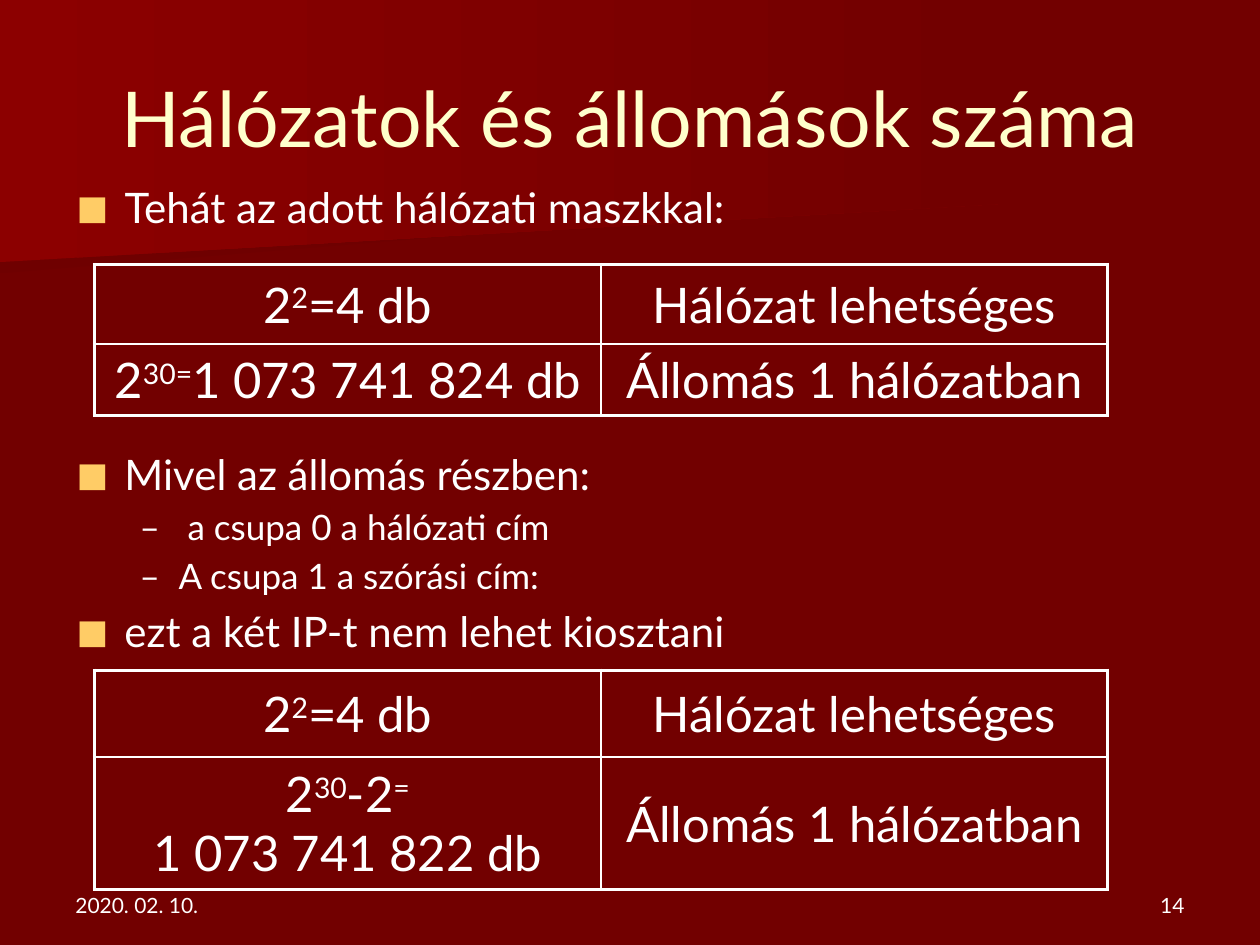
"""Build the slide on the number of networks and hosts."""
from lxml import etree
from pptx import Presentation
from pptx import util as u
from pptx.dml.color import RGBColor
from pptx.enum import text
from pptx.oxml import ns

FONT = "Lato"
WHITE = RGBColor(0xFF, 0xFF, 0xFF)
CREAM = RGBColor(0xFF, 0xFF, 0xCC)
GOLD = RGBColor(0xFF, 0xCC, 0x66)
MAROON = RGBColor(0x72, 0x00, 0x00)
SHADE = RGBColor(0x6F, 0x00, 0x00)
RED = RGBColor(0x8C, 0x00, 0x00)

TITLE = "Hálózatok és állomások száma"
BANDS = [
    (SHADE, [(7.78, 1.53), (0, 2.17), (0, 1.01), (7.79, 1.01), (7.78, 1.28)]),
    (RED, [(7.92, 1.62), (0, 2.08), (0, 0), (7.92, 0)]),
]
FOOTERS = [
    ("2020. 02. 10.", 0.5, text.PP_ALIGN.LEFT),
    ("14", 7.17, text.PP_ALIGN.RIGHT),
]
LISTS = [
    ((0.51, 1.39, 8.99, 0.58), [(0, "Tehát az adott hálózati maszkkal:")]),
    ((0.51, 3.51, 9.06, 1.65), [
        (0, "Mivel az állomás részben:"),
        (1, " a csupa 0 a hálózati cím"),
        (1, "A csupa 1 a szórási cím:"),
        (0, "ezt a két IP-t nem lehet kiosztani"),
    ]),
]
LEVELS = [
    {"size": 24, "left": 0.38, "hang": 0.38, "mark": "■", "color": GOLD, "scale": 80},
    {"size": 20, "left": 0.81, "hang": 0.31, "mark": "–", "color": WHITE, "scale": 100},
]
NETWORKS = [[("2", False), ("2", True), ("=4 db", False)], [("Hálózat lehetséges", False)]]
HOSTS = [("Állomás 1 hálózatban", False)]
TABLES = [
    (2.1, [0.63, 0.57], [
        NETWORKS,
        [[("2", False), ("30=", True), ("1 073 741 824 db", False)], HOSTS],
    ]),
    (5.32, [0.69, 1.05], [
        NETWORKS,
        [[("2", False), ("30", True), ("-2", False), ("=", True), ("\n", False),
          ("1 073 741 822 db", False)], HOSTS],
    ]),
]
TABLE_LEFT, COLUMN_WIDTH = 0.75, 4.02
OUTER, INNER = 2.25, 1


def add_span(para, words, size, color=WHITE, raised=False):
    span = para.add_run()
    span.text = words
    span.font.name, span.font.size = FONT, u.Pt(size)
    span.font.color.rgb = color
    if raised:
        span.font._element.set("baseline", "30000")


def add_child(parent, tag, **attributes):
    child = etree.SubElement(parent, ns.qn("a:" + tag))
    for name, value in attributes.items():
        child.set(name, str(value))
    return child


def space_before(para):
    props = para._p.get_or_add_pPr()
    add_child(add_child(props, "spcBef"), "spcPct", val=20000)
    return props


def add_bullet(para, level):
    style = LEVELS[level]
    props = space_before(para)
    props.set("lvl", str(level))
    props.set("marL", str(u.Inches(style["left"])))
    props.set("indent", str(-u.Inches(style["hang"])))
    add_child(add_child(props, "buClr"), "srgbClr", val=style["color"])
    add_child(props, "buSzPct", val=style["scale"] * 1000)
    add_child(props, "buFont", typeface=FONT)
    add_child(props, "buChar", char=style["mark"])


def add_box(page, place):
    box = page.shapes.add_textbox(*map(u.Inches, place))
    box.text_frame.word_wrap = True
    return box.text_frame


def add_band(page, color, points):
    corners = [(u.Inches(x), u.Inches(y)) for x, y in points]
    builder = page.shapes.build_freeform(*corners[0])
    builder.add_line_segments(corners[1:], close=True)
    band = builder.convert_to_shape()
    band.shadow.inherit = False
    band.line.fill.background()
    band.fill.gradient()
    band.fill.gradient_angle = 0
    for stop, shade in zip(band.fill.gradient_stops, (color, MAROON)):
        stop.color.rgb = shade


def add_list(page, place, items):
    frame = add_box(page, place)
    for index, (level, words) in enumerate(items):
        para = frame.add_paragraph() if index else frame.paragraphs[0]
        add_bullet(para, level)
        add_span(para, words, LEVELS[level]["size"])


def draw_borders(cell, edges):
    props = cell._tc.get_or_add_tcPr()
    for index, (tag, outer) in enumerate(edges):
        line = add_child(props, tag, w=u.Pt(OUTER if outer else INNER))
        add_child(add_child(line, "solidFill"), "srgbClr", val=WHITE)
        props.insert(index, line)


def add_table(page, top, heights, rows):
    columns = len(rows[0])
    frame = page.shapes.add_table(
        len(rows), columns, u.Inches(TABLE_LEFT), u.Inches(top),
        u.Inches(COLUMN_WIDTH * columns), u.Inches(sum(heights)))
    table = frame.table
    table.first_row = table.horz_banding = False
    for column in table.columns:
        column.width = u.Inches(COLUMN_WIDTH)
    for r, (height, row) in enumerate(zip(heights, rows)):
        table.rows[r].height = u.Inches(height)
        for c, spans in enumerate(row):
            cell = table.cell(r, c)
            cell.vertical_anchor = text.MSO_ANCHOR.MIDDLE
            cell.fill.background()
            draw_borders(cell, [("lnL", c == 0), ("lnR", c == columns - 1),
                                ("lnT", r == 0), ("lnB", r == len(rows) - 1)])
            para = cell.text_frame.paragraphs[0]
            para.alignment = text.PP_ALIGN.CENTER
            space_before(para)
            for words, raised in spans:
                if words == "\n":
                    para.add_line_break()
                else:
                    add_span(para, words, 28, raised=raised)


def main():
    deck = Presentation()
    deck.slide_width, deck.slide_height = u.Inches(10), u.Inches(7.5)
    page = deck.slides.add_slide(deck.slide_layouts[5])
    page.background.fill.solid()
    page.background.fill.fore_color.rgb = MAROON
    for color, points in BANDS:
        add_band(page, color, points)

    title = page.shapes.title
    page.shapes._spTree.append(title._element)
    title.left, title.top, title.width, title.height = map(u.Inches, (0.5, 0.3, 9, 1.25))
    title.text_frame.vertical_anchor = text.MSO_ANCHOR.MIDDLE
    heading = title.text_frame.paragraphs[0]
    heading.alignment = text.PP_ALIGN.CENTER
    add_span(heading, TITLE, 44, CREAM)

    for words, left, align in FOOTERS:
        frame = add_box(page, (left, 6.83, 2.33, 0.5))
        frame.vertical_anchor = text.MSO_ANCHOR.BOTTOM
        frame.paragraphs[0].alignment = align
        add_span(frame.paragraphs[0], words, 12)
    for place, items in LISTS:
        add_list(page, place, items)
    for top, heights, rows in TABLES:
        add_table(page, top, heights, rows)
    deck.save("out.pptx")


if __name__ == "__main__":
    main()
